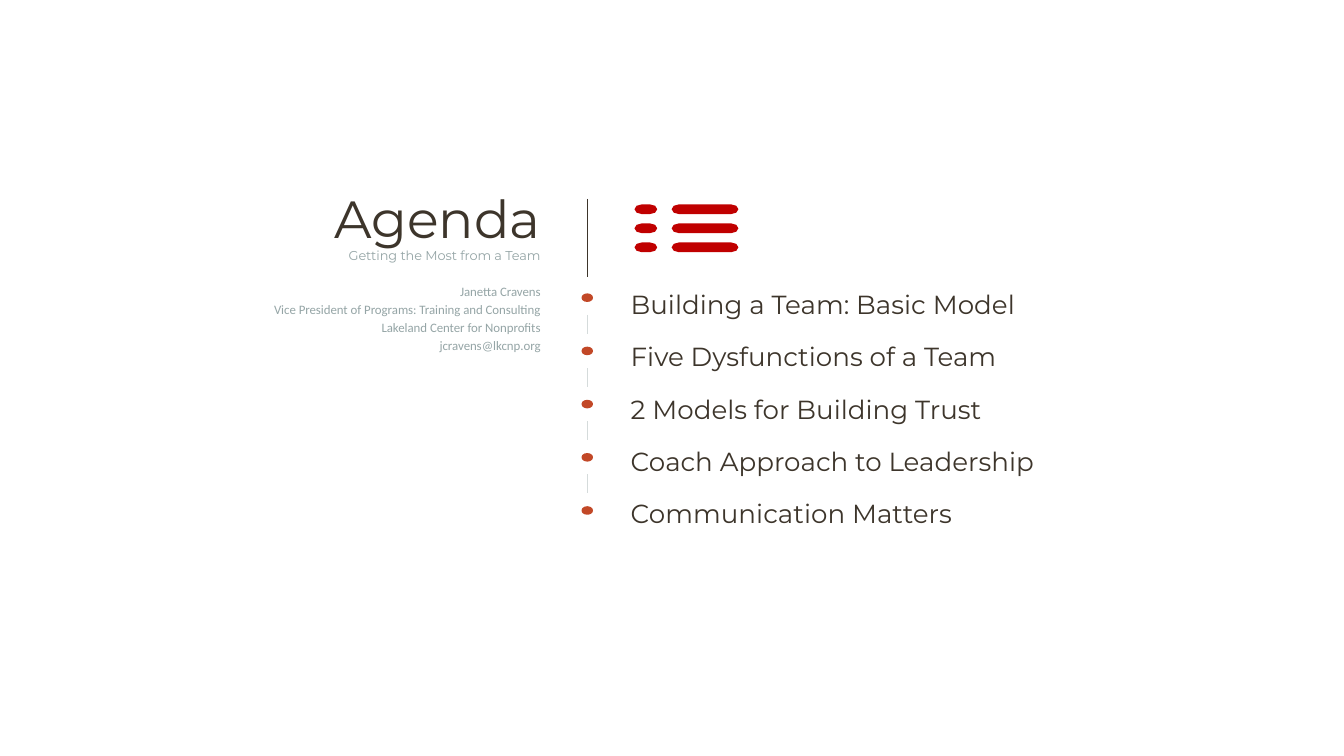
import math
import pptx
import pptx.util
import pptx.dml.color
import pptx.enum.shapes
import pptx.enum.text
import pptx.oxml.ns
import lxml.etree

Pt = pptx.util.Pt
ALIGN = pptx.enum.text.PP_ALIGN
ANCHOR = pptx.enum.text.MSO_ANCHOR
COLORS = {"text": "3D352B", "muted": "95A5A6", "dot": "C24827",
          "icon": "C00000", "dash": "D5DBDB"}

presentation = pptx.Presentation()
presentation.slide_width, presentation.slide_height = Pt(720), Pt(405)
slide = presentation.slides.add_slide(presentation.slide_layouts[6])


def add_text(lines, left, top, width, height, *, size, fill, fonts, before,
             align=ALIGN.LEFT, anchor=ANCHOR.TOP, spacing=None):
    """Add one paragraph per line; fonts and before hold one value per line."""
    frame = slide.shapes.add_textbox(Pt(left), Pt(top), Pt(width), Pt(height)).text_frame
    frame.word_wrap = True
    frame.vertical_anchor = anchor
    for index, line in enumerate(lines):
        paragraph = frame.paragraphs[0] if index == 0 else frame.add_paragraph()
        paragraph.alignment = align
        paragraph.space_before = Pt(before[index])
        paragraph.line_spacing = spacing
        run = paragraph.add_run()
        run.text = line
        run.font.name = fonts[index]
        run.font.size = Pt(size)
        run.font.color.rgb = pptx.dml.color.RGBColor.from_string(COLORS[fill])


def add_vertical_line(x, top, bottom, fill):
    line = slide.shapes.add_connector(pptx.enum.shapes.MSO_CONNECTOR.STRAIGHT,
                                      Pt(x), Pt(top), Pt(x), Pt(bottom))
    line.line.color.rgb = pptx.dml.color.RGBColor.from_string(COLORS[fill])
    line.line.width = Pt(0.75)
    lxml.etree.SubElement(line._element.spPr, pptx.oxml.ns.qn("a:effectLst"))


# Title and presenter
add_text(["Agenda"], 155.4, 96.2, 141.1, 41, size=28, fill="text",
         fonts=["Montserrat"], before=[0], align=ALIGN.RIGHT, anchor=ANCHOR.MIDDLE)
presenter = ["Getting the Most from a Team",
             "Janetta Cravens",
             "Vice President of Programs: Training and Consulting",
             "Lakeland Center for Nonprofits",
             "jcravens@lkcnp.org"]
add_text(presenter, 126.2, 128.9, 170.6, 60.5, size=6.9, fill="muted",
         fonts=["Montserrat"] + ["Calibri"] * 4, before=[0, 11.2, 1.4, 1.4, 1.4],
         align=ALIGN.RIGHT)

# Agenda items
items = ["Building a Team: Basic Model",
         "Five Dysfunctions of a Team",
         "2 Models for Building Trust",
         "Coach Approach to Leadership",
         "Communication Matters"]
add_text(items, 330.8, 142.6, 335.5, 148.3, size=14, fill="text",
         fonts=["Montserrat"] * 5, before=[2.8] * 5, spacing=1.5)

# Timeline: heading rule, then a dot per item with dashes between
axis, pitch = 314.6, 28.5
dot_color = pptx.dml.color.RGBColor.from_string(COLORS["dot"])
add_vertical_line(axis, 106.6, 148.3, "text")
for index in range(len(items)):
    dot = slide.shapes.add_shape(pptx.enum.shapes.MSO_SHAPE.OVAL, Pt(axis - 2.6),
                                 Pt(157.7 + index * pitch), Pt(5.2), Pt(3.6))
    dot.shadow.inherit = False
    dot.fill.solid()
    dot.fill.fore_color.rgb = dot_color
    dot.line.color.rgb = dot_color
    dot.line.width = Pt(1)
    if index < len(items) - 1:
        dash_top = 168.7 + index * pitch
        add_vertical_line(axis, dash_top, dash_top + 10, "dash")

# List icon: three rows of a short and a long bar with elliptical ends
cap_width, cap_height, steps = 3.9, 2.6, 4
outlines = []
for row in range(3):
    middle = 112.1 + row * 10.2
    for left, right in ((339.9, 352.1), (359.8, 395.6)):
        outline = []
        for end, start in ((right - cap_width, -90), (left + cap_width, 90)):
            for step in range(steps + 1):
                angle = math.radians(start + 180 * step / steps)
                outline.append((Pt(end + cap_width * math.cos(angle)),
                                Pt(middle + cap_height * math.sin(angle))))
        outlines.append(outline)
builder = slide.shapes.build_freeform(*outlines[0][0])
for index, outline in enumerate(outlines):
    if index:
        builder.move_to(*outline[0])
    builder.add_line_segments(outline[1:], close=True)
icon = builder.convert_to_shape()
icon.shadow.inherit = False
icon.fill.solid()
icon.fill.fore_color.rgb = pptx.dml.color.RGBColor.from_string(COLORS["icon"])
icon.line.fill.background()

presentation.save("out.pptx")
